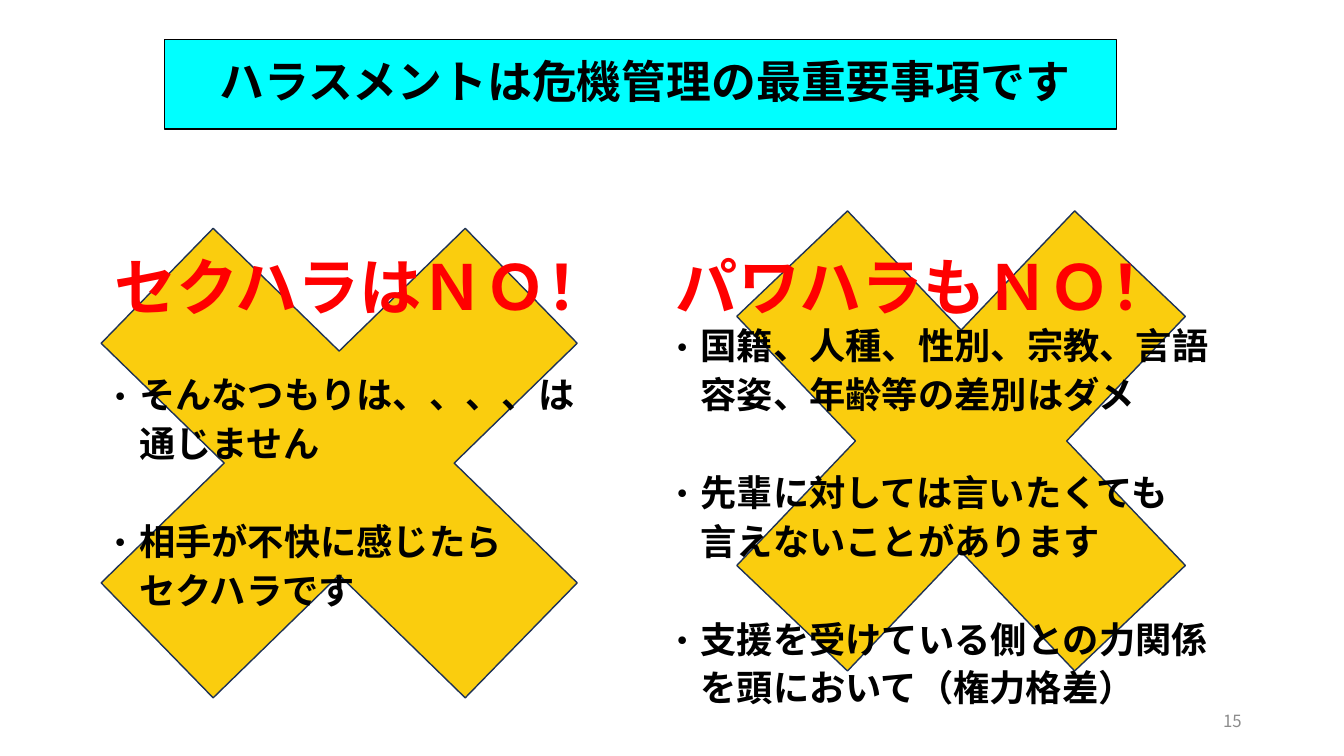
from dataclasses import dataclass

from lxml import etree
from pptx import Presentation
from pptx.dml.color import RGBColor
from pptx.enum.shapes import MSO_SHAPE
from pptx.enum.text import MSO_ANCHOR, PP_ALIGN
from pptx.oxml.ns import qn
from pptx.util import Pt

CROSS = MSO_SHAPE.MATH_MULTIPLY
TOP, MIDDLE = MSO_ANCHOR.TOP, MSO_ANCHOR.MIDDLE
LEFT, RIGHT = PP_ALIGN.LEFT, PP_ALIGN.RIGHT

TITLE = "ハラスメントは危機管理の最重要事項です"
PAGE_NUMBER = "15"
COLUMNS = [
    {
        "heading": "セクハラはＮＯ！",
        "items": ["そんなつもりは、、、、は\v通じません",
                  "相手が不快に感じたら\vセクハラです"],
        "left": 73.4,
        "items_top": 262.3,
        "cross": (-7.9, 87.1, 500.4, 487.4),
    },
    {
        "heading": "パワハラもＮＯ！",
        "items": ["国籍、人種、性別、宗教、言語\v容姿、年齢等の差別はダメ",
                  "先輩に対しては言いたくても\v言えないことがあります",
                  "支援を受けている側との力関係\vを頭において（権力格差）"],
        "left": 474.5,
        "items_top": 227.4,
        "cross": (454.3, 71.3, 464.4, 487.4),
    },
]


@dataclass(frozen=True)
class Theme:
    font: str = "Noto Sans CJK JP"
    black: RGBColor = RGBColor(0x00, 0x00, 0x00)
    red: RGBColor = RGBColor(0xFF, 0x00, 0x00)
    cyan: RGBColor = RGBColor(0x00, 0xFF, 0xFF)
    gold: RGBColor = RGBColor(0xFA, 0xCD, 0x0E)
    navy: RGBColor = RGBColor(0x1E, 0x32, 0x56)
    grey: RGBColor = RGBColor(0x8C, 0x8C, 0x8C)
    title_size: float = 32
    heading_size: float = 44.4
    item_size: float = 25.9
    number_size: float = 12


THEME = Theme()
HEADING_TOP, HEADING_LINE, HEADING_INDENT = 182.4, 48, 8.3
ITEM_LINE = 34.9
COLUMN_WIDTH = 420


def style_runs(p, size, color, bold=False):
    for r in p.runs:
        r.font.size, r.font.bold = Pt(size), bold
        r.font.color.rgb = color
        r.font.name = THEME.font
        ea = etree.SubElement(r.font._element, qn("a:ea"))
        ea.set("typeface", THEME.font)


def paint(s, fill, line, width):
    s.fill.solid()
    s.fill.fore_color.rgb = fill
    s.line.color.rgb = line
    s.line.width = Pt(width)


def add_text_box(slide, left, top, width, height, anchor=TOP):
    tf = slide.shapes.add_textbox(*map(Pt, (left, top, width, height))).text_frame
    tf.word_wrap = True
    tf.vertical_anchor = anchor
    tf.margin_left = tf.margin_right = tf.margin_top = tf.margin_bottom = 0
    return tf


def add_bullet(p):
    """Hang the paragraph behind a middle dot one character wide."""
    pPr = p._p.get_or_add_pPr()
    indent = Pt(THEME.item_size)
    pPr.set("marL", str(indent))
    pPr.set("indent", str(-indent))
    etree.SubElement(pPr, qn("a:buFont")).set("typeface", THEME.font)
    etree.SubElement(pPr, qn("a:buChar")).set("char", "・")


def add_cross(slide, box):
    s = slide.shapes.add_shape(CROSS, *map(Pt, box))
    s.shadow.inherit = False
    paint(s, THEME.gold, THEME.navy, 1)


def add_title(slide):
    s = slide.shapes.title
    s.left, s.top, s.width, s.height = map(Pt, (117.4, 28.1, 680.4, 64.1))
    paint(s, THEME.cyan, THEME.black, 0.75)
    tf = s.text_frame
    tf.text = TITLE
    tf.vertical_anchor = MIDDLE
    tf.margin_left = Pt(7.2 + THEME.title_size)
    p = tf.paragraphs[0]
    p.alignment, p.line_spacing = LEFT, 0.9
    style_runs(p, THEME.title_size, THEME.black, True)


def add_column(slide, column):
    tf = add_text_box(slide, column["left"] + HEADING_INDENT, HEADING_TOP,
                      COLUMN_WIDTH, HEADING_LINE)
    tf.text = column["heading"]
    p = tf.paragraphs[0]
    p.line_spacing = Pt(HEADING_LINE)
    style_runs(p, THEME.heading_size, THEME.red, True)

    items = column["items"]
    height = ITEM_LINE * (3 * len(items) - 1)
    tf = add_text_box(slide, column["left"], column["items_top"], COLUMN_WIDTH, height)
    for i, item in enumerate(items):
        p = tf.add_paragraph() if i else tf.paragraphs[0]
        add_bullet(p)
        p.text = item
        p.line_spacing = Pt(ITEM_LINE)
        if i:
            p.space_before = Pt(ITEM_LINE)
        style_runs(p, THEME.item_size, THEME.black, True)


def add_page_number(slide):
    tf = add_text_box(slide, 678.2, 500.4, 208.8, 28.8, MIDDLE)
    tf.text = PAGE_NUMBER
    p = tf.paragraphs[0]
    p.alignment = RIGHT
    style_runs(p, THEME.number_size, THEME.grey)


def main():
    prs = Presentation()
    prs.slide_width, prs.slide_height = Pt(960), Pt(540)
    slide = prs.slides.add_slide(prs.slide_layouts[5])
    for column in COLUMNS:
        add_cross(slide, column["cross"])
    add_title(slide)
    for column in COLUMNS:
        add_column(slide, column)
    add_page_number(slide)
    prs.save("out.pptx")


if __name__ == "__main__":
    main()
